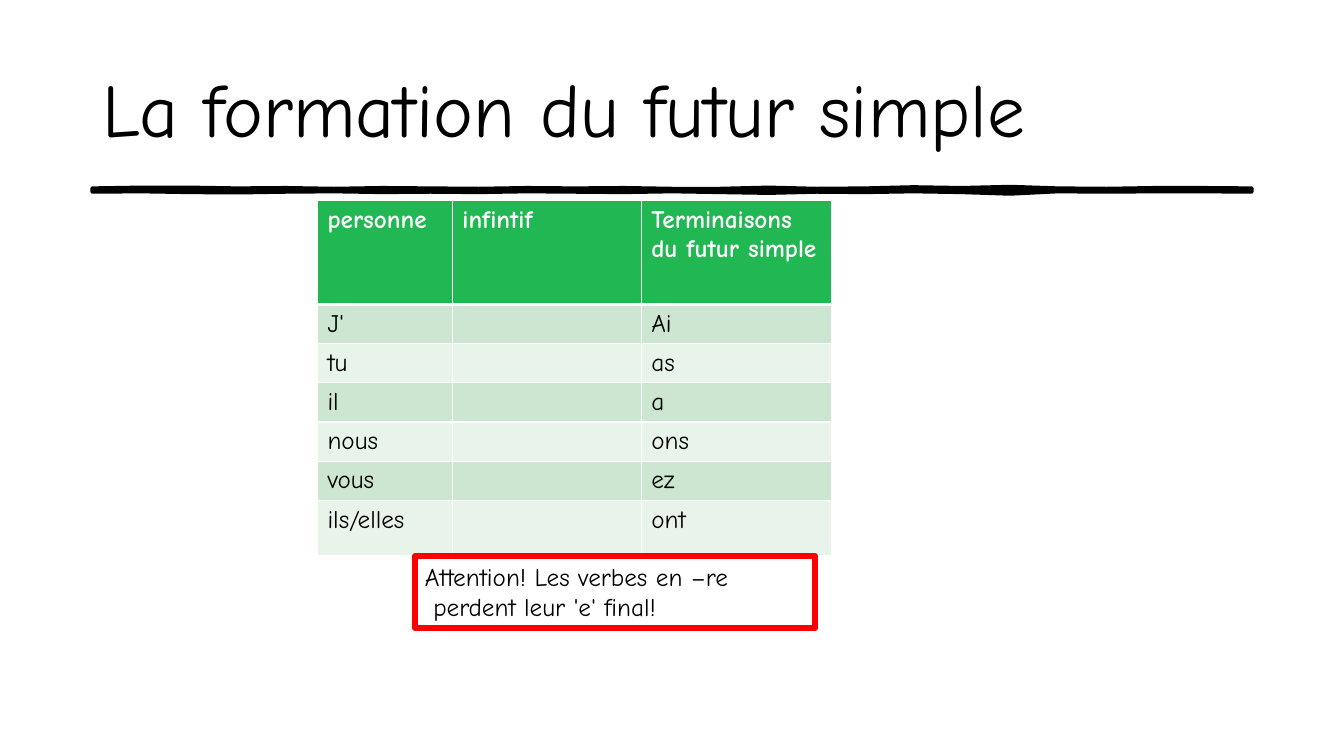
from lxml.etree import SubElement
from pptx import Presentation
from pptx.dml.color import RGBColor
from pptx.enum.shapes import MSO_SHAPE
from pptx.enum.text import MSO_ANCHOR, PP_ALIGN
from pptx.oxml.ns import qn
from pptx.util import Cm, Pt

FONT = "Comic Neue"
COLORS = {
    "ink": "000000",
    "white": "FFFFFF",
    "header": "21B854",
    "odd row": "CDE6D1",
    "even row": "E8F3E9",
    "warning": "FF0000",
}

TITLE = "La formation du futur simple"
TITLE_BOX = (2.33, 1.02, 29.21, 3.68)

TABLE_ROWS = [
    ("personne", "infintif", "Terminaisons du futur simple"),
    ("J'", "", "Ai "),
    ("tu", "", "as"),
    ("il", "", "a"),
    ("nous", "", "ons"),
    ("vous", "", "ez"),
    ("ils/elles", "", "ont"),
]
TABLE_LEFT, TABLE_TOP = 8, 5.06
COLUMN_WIDTHS = [3.4, 4.76, 4.8]
ROW_HEIGHTS = [2.61] + [0.89] * 5 + [1.4]

WARNING = ["Attention! Les verbes en –re", " perdent leur 'e' final!"]
WARNING_BOX = (10.46, 14.02, 10.08, 1.8)

# Hand-drawn rule: height of each edge at equal steps from left to right
RULE_LEFT, RULE_WIDTH = 2.33, 29.21
RULE_TOP_EDGE = [4.75, 4.73, 4.73, 4.75, 4.74, 4.76, 4.74, 4.75, 4.76, 4.74, 4.75, 4.74, 4.76,
                 4.76, 4.73, 4.76, 4.75, 4.72, 4.74, 4.71, 4.75, 4.76, 4.74, 4.74, 4.75]
RULE_BOTTOM_EDGE = [4.83, 4.82, 4.84, 4.85, 4.83, 4.82, 4.84, 4.83, 4.84, 4.82, 4.83, 4.84, 4.82,
                    4.84, 4.86, 4.83, 4.84, 4.82, 4.84, 4.88, 4.82, 4.83, 4.82, 4.82, 4.83]


def color(name):
    return RGBColor.from_string(COLORS[name])


def write(paragraph, text, size, color_name="ink", bold=False):
    paragraph.text = text
    paragraph.alignment = PP_ALIGN.LEFT
    font_format = {"name": FONT, "size": Pt(size), "bold": bold}
    for name, value in font_format.items():
        setattr(paragraph.font, name, value)
    paragraph.font.color.rgb = color(color_name)


def add_borders(cell, widths):
    """Draw white cell borders; widths maps each side (L, R, T, B) to points."""
    properties = cell._tc.get_or_add_tcPr()
    for side, width in widths.items():
        line = SubElement(properties, qn(f"a:ln{side}"), w=str(Pt(width)))
        fill = SubElement(line, qn("a:solidFill"))
        SubElement(fill, qn("a:srgbClr"), val=COLORS["white"])


def add_rule(slide):
    step = RULE_WIDTH / (len(RULE_TOP_EDGE) - 1)
    top, bottom = (
        [(Cm(RULE_LEFT + index * step), Cm(height)) for index, height in enumerate(edge)]
        for edge in (RULE_TOP_EDGE, RULE_BOTTOM_EDGE)
    )
    builder = slide.shapes.build_freeform(*top[0])
    builder.add_line_segments(top[1:] + bottom[::-1], close=True)
    rule = builder.convert_to_shape()
    rule.shadow.inherit = False
    rule.fill.solid()
    rule.fill.fore_color.rgb = color("ink")
    rule.line.color.rgb = color("ink")
    rule.line.width = Pt(3)


def add_title(slide):
    title = slide.shapes.title
    for name, value in zip(("left", "top", "width", "height"), TITLE_BOX):
        setattr(title, name, Cm(value))
    title.text_frame.vertical_anchor = MSO_ANCHOR.MIDDLE
    paragraph = title.text_frame.paragraphs[0]
    write(paragraph, TITLE, 54)
    paragraph.line_spacing = 0.9


def add_endings_table(slide):
    table = slide.shapes.add_table(
        len(ROW_HEIGHTS), len(COLUMN_WIDTHS), Cm(TABLE_LEFT), Cm(TABLE_TOP),
        Cm(sum(COLUMN_WIDTHS)), Cm(sum(ROW_HEIGHTS)),
    ).table
    for column, width in zip(table.columns, COLUMN_WIDTHS):
        column.width = Cm(width)
    for row_index, (row, height) in enumerate(zip(table.rows, ROW_HEIGHTS)):
        row.height = Cm(height)
        is_header = row_index == 0
        fill_name = "header" if is_header else "odd row" if row_index % 2 else "even row"
        widths = {"L": 1, "R": 1, "T": 3 if row_index == 1 else 1, "B": 3 if is_header else 1}
        for cell, text in zip(row.cells, TABLE_ROWS[row_index]):
            add_borders(cell, widths)
            cell.fill.solid()
            cell.fill.fore_color.rgb = color(fill_name)
            write(cell.text_frame.paragraphs[0], text, 18,
                  "white" if is_header else "ink", is_header)


def add_warning(slide):
    box = slide.shapes.add_shape(MSO_SHAPE.RECTANGLE, *map(Cm, WARNING_BOX))
    box.shadow.inherit = False
    box.fill.background()
    box.line.color.rgb = color("warning")
    box.line.width = Pt(4.5)
    frame = box.text_frame
    frame.word_wrap = True
    frame.vertical_anchor = MSO_ANCHOR.TOP
    for index, text in enumerate(WARNING):
        paragraph = frame.add_paragraph() if index else frame.paragraphs[0]
        write(paragraph, text, 18)


def main():
    presentation = Presentation()
    presentation.slide_width = Cm(33.87)
    presentation.slide_height = Cm(19.05)
    slide = presentation.slides.add_slide(presentation.slide_layouts[5])
    add_rule(slide)
    add_title(slide)
    add_endings_table(slide)
    add_warning(slide)
    presentation.save("out.pptx")


if __name__ == "__main__":
    main()
